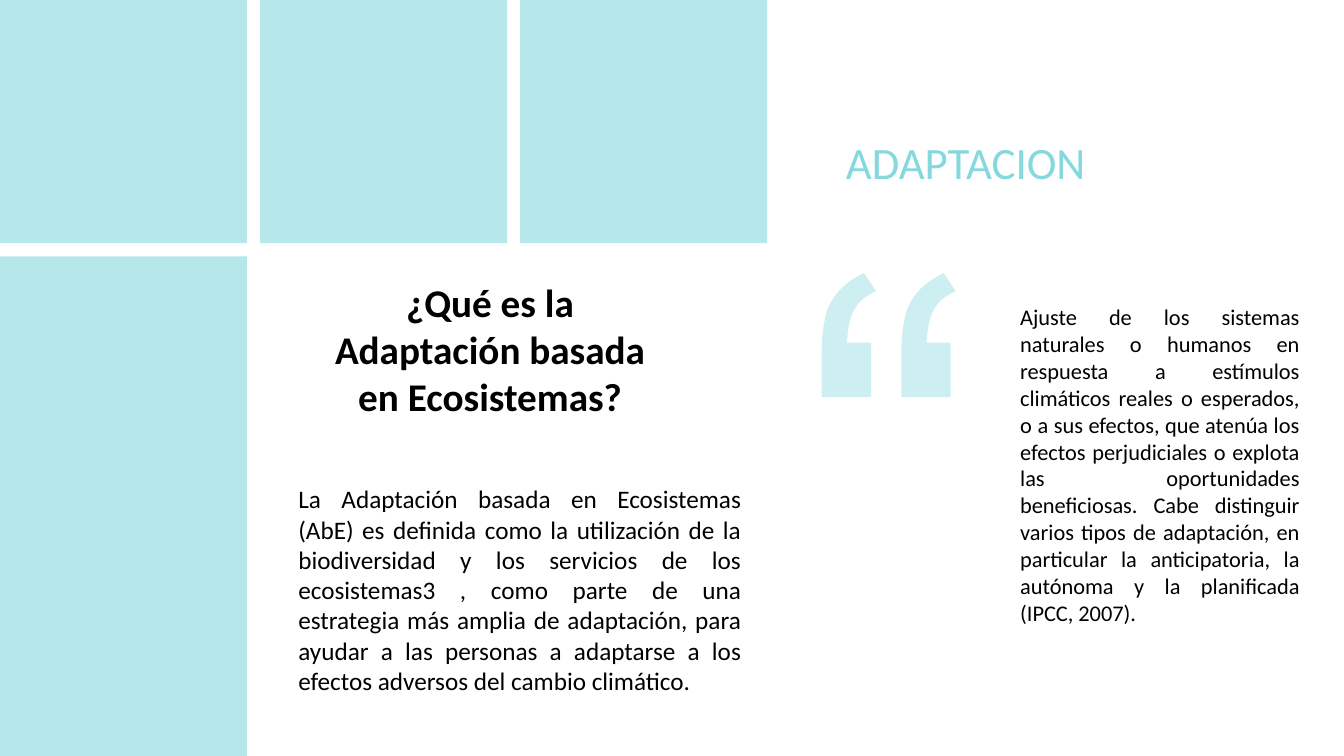
from dataclasses import dataclass

from lxml.etree import SubElement
from pptx import Presentation
from pptx.dml.color import RGBColor
from pptx.enum.shapes import MSO_SHAPE as SHAPE
from pptx.enum.text import MSO_ANCHOR as ANCHOR, MSO_AUTO_SIZE as AUTO, PP_ALIGN as ALIGN
from pptx.oxml.ns import qn
from pptx.util import Inches, Pt

WIDTH, HEIGHT = 13.33, 7.5
GAP = 0.13
COL = 2.58
ROW = (HEIGHT + GAP) / 3
AQUA, BLACK = "85D8DE", "000000"
FONT = "Calibri"


@dataclass
class Tile:
    col: int
    row: int
    rows: int = 1


@dataclass
class Label:
    x: float
    y: float
    w: float
    h: float
    text: str
    size: int
    align: ALIGN = ALIGN.JUSTIFY
    color: str = BLACK
    bold: bool = False
    anchor: ANCHOR = ANCHOR.TOP
    inset_x: float = 0.1
    inset_y: float = 0.05


TILES = [Tile(2, 0), Tile(0, 1, 2), Tile(1, 0), Tile(0, 0)]

LABELS = [
    Label(75.17, 39.47, 22.28, 44.4,
          "Ajuste de los sistemas naturales o humanos en respuesta a estímulos "
          "climáticos reales o esperados, o a sus efectos, que atenúa los efectos "
          "perjudiciales o explota las oportunidades beneficiosas. Cabe distinguir "
          "varios tipos de adaptación, en particular la anticipatoria, la autónoma "
          "y la planificada (IPCC, 2007).", 16),
    Label(62.64, 17.73, 30.76, 7.2, "ADAPTACION", 32, ALIGN.LEFT, AQUA,
          anchor=ANCHOR.MIDDLE, inset_x=0.04, inset_y=0),
    Label(22.88, 36.13, 27.16, 20.13,
          "¿Qué es la Adaptación basada en Ecosistemas?", 28, ALIGN.CENTER, bold=True),
    Label(21.46, 63.33, 34.43, 29.6,
          "La Adaptación basada en Ecosistemas (AbE) es definida como la utilización "
          "de la biodiversidad y los servicios de los ecosistemas3 , como parte de "
          "una estrategia más amplia de adaptación, para ayudar a las personas a "
          "adaptarse a los efectos adversos del cambio climático.", 18),
]

QUOTE_X, QUOTE_Y, QUOTE_STEP = 61.14, 36.13, 0.79
UNITS_PER_INCH = 1000
QUOTE_START = (0.42, 0)
QUOTE_PATH = [
    [(0.54, 0.18)],
    [(0.44, 0.22), (0.37, 0.28), (0.33, 0.35)],
    [(0.28, 0.43), (0.26, 0.54), (0.25, 0.69)],
    [(0.49, 0.69)], [(0.49, 1.23)], [(0, 1.23)], [(0, 0.81)],
    [(0, 0.58), (0.03, 0.41), (0.08, 0.31)],
    [(0.15, 0.17), (0.27, 0.07), QUOTE_START],
]


def rgb(color: str) -> RGBColor:
    return RGBColor.from_string(color)


def across(share: float) -> int:
    return Inches(WIDTH * share / 100)


def down(share: float) -> int:
    return Inches(HEIGHT * share / 100)


def paint(sp, color: str, opacity: int) -> None:
    sp.shadow.inherit = False
    sp.line.fill.background()
    sp.fill.solid()
    sp.fill.fore_color.rgb = rgb(color)
    clr = sp.fill._xPr.find(".//" + qn("a:srgbClr"))
    SubElement(clr, qn("a:alpha"), val=str(opacity * 1000))


def add_tile(slide, tile: Tile) -> None:
    sp = slide.shapes.add_shape(
        SHAPE.RECTANGLE, Inches(tile.col * COL), Inches(tile.row * ROW),
        Inches(COL - GAP), Inches(tile.rows * ROW - GAP))
    paint(sp, AQUA, 60)


def bezier(points: list, t: float) -> tuple:
    while len(points) > 1:
        points = [(a + (c - a) * t, b + (d - b) * t)
                  for (a, b), (c, d) in zip(points, points[1:])]
    return points[0]


def quote_outline(shift: float, steps: int = 12) -> list:
    outline = [QUOTE_START]
    for segment in QUOTE_PATH:
        n = steps if len(segment) > 1 else 1
        curve = [outline[-1], *segment]
        outline += [bezier(curve, i / n) for i in range(1, n + 1)]
    return [(round((x + shift) * UNITS_PER_INCH), round(y * UNITS_PER_INCH))
            for x, y in outline]


def add_quote(slide) -> None:
    right, left = quote_outline(QUOTE_STEP), quote_outline(0)
    builder = slide.shapes.build_freeform(*right[0], scale=Inches(1) / UNITS_PER_INCH)
    builder.add_line_segments(right[1:], close=True)
    builder.move_to(*left[0])
    builder.add_line_segments(left[1:], close=True)
    sp = builder.convert_to_shape(across(QUOTE_X), down(QUOTE_Y))
    paint(sp, AQUA, 40)


def add_label(slide, label: Label) -> None:
    sp = slide.shapes.add_textbox(
        across(label.x), down(label.y), across(label.w), down(label.h))
    tf = sp.text_frame
    tf.word_wrap = True
    tf.auto_size = AUTO.SHAPE_TO_FIT_TEXT
    tf.vertical_anchor = label.anchor
    tf.margin_left = tf.margin_right = Inches(label.inset_x)
    tf.margin_top = tf.margin_bottom = Inches(label.inset_y)
    p = tf.paragraphs[0]
    p.text = label.text
    p.alignment = label.align
    p.font.name = FONT
    p.font.size = Pt(label.size)
    p.font.bold = label.bold
    p.font.color.rgb = rgb(label.color)


def main() -> None:
    prs = Presentation()
    prs.slide_width, prs.slide_height = Inches(WIDTH), Inches(HEIGHT)
    slide = prs.slides.add_slide(prs.slide_layouts[6])
    add_quote(slide)
    for tile in TILES:
        add_tile(slide, tile)
    for label in LABELS:
        add_label(slide, label)
    prs.save("out.pptx")


if __name__ == "__main__":
    main()
